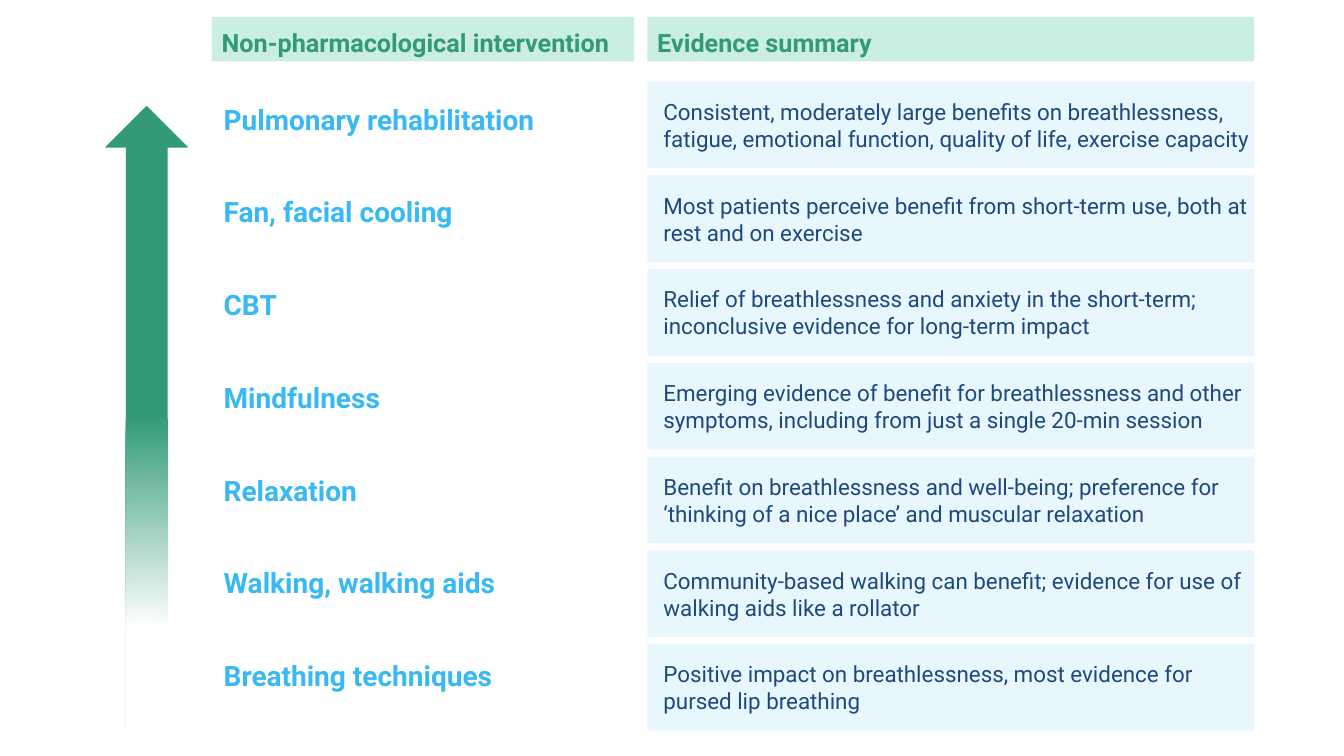
"""Build a slide ranking non-pharmacological interventions by their evidence."""
from lxml import etree
from pptx import Presentation
from pptx.dml.color import RGBColor
from pptx.enum.shapes import MSO_SHAPE
from pptx.enum.text import MSO_ANCHOR, MSO_AUTO_SIZE, PP_ALIGN
from pptx.oxml import parse_xml
from pptx.oxml.ns import nsdecls
from pptx.util import Inches, Pt

RECTANGLE, UP_ARROW = MSO_SHAPE.RECTANGLE, MSO_SHAPE.UP_ARROW
LEFT = PP_ALIGN.LEFT
TOP, MIDDLE = MSO_ANCHOR.TOP, MSO_ANCHOR.MIDDLE
GROW, FIXED = MSO_AUTO_SIZE.SHAPE_TO_FIT_TEXT, MSO_AUTO_SIZE.NONE

GREEN, MINT, SKY, ICE, NAVY = "329A77", "CAEEE2", "39B9F3", "E8F7FE", "1F497D"
LABEL_LEFT, LABEL_WIDTH, LABEL_HEIGHT = 2.12, 3.9, 0.68
LABEL_TOP, LABEL_PITCH = 0.63, 0.92
PANEL_LEFT, PANEL_WIDTH, PANEL_HEIGHT = 6.42, 6.02, 0.86
PANEL_TOP, PANEL_PITCH = 0.81, 0.93
HEADER_TOP, HEADER_HEIGHT = 0.17, 0.44

HEADERS = [
    ("Non-pharmacological intervention", 2.1, 4.19),
    ("Evidence summary", PANEL_LEFT, PANEL_WIDTH),
]
INTERVENTIONS = [
    ("Pulmonary rehabilitation",
     "Consistent, moderately large benefits on breathlessness, fatigue, "
     "emotional function, quality of life, exercise capacity"),
    ("Fan, facial cooling",
     "Most patients perceive benefit from short-term use, both at rest and on exercise"),
    ("CBT",
     "Relief of breathlessness and anxiety in the short-term; "
     "inconclusive evidence for long-term impact"),
    ("Mindfulness",
     "Emerging evidence of benefit for breathlessness and other symptoms, "
     "including from just a single 20-min session"),
    ("Relaxation",
     "Benefit on breathlessness and well-being; preference for "
     "‘thinking of a nice place’ and muscular relaxation"),
    ("Walking, walking aids",
     "Community-based walking can benefit; evidence for use of walking aids like a rollator"),
    ("Breathing techniques",
     "Positive impact on breathlessness, most evidence for pursed lip breathing"),
]
ARROW_STOPS = [(5, "FFFFFF"), (33, "FFFFFF"), (100, GREEN)]


def add_block(kind, left, top, width, height, fill):
    block = page.shapes.add_shape(kind, *map(Inches, (left, top, width, height)))
    block.shadow.inherit = False
    block.line.fill.background()
    block.fill.solid()
    block.fill.fore_color.rgb = RGBColor.from_string(fill)
    return block


def write(box, text, size, color, bold, spacing, anchor, fit):
    frame = box.text_frame
    frame.word_wrap = True
    frame.auto_size = fit
    frame.vertical_anchor = anchor
    para = frame.paragraphs[0]
    para.alignment = LEFT
    para.line_spacing = spacing
    span = para.add_run()
    span.text = text
    span.font.name = "Roboto"
    span.font.size = Pt(size)
    span.font.bold = bold
    span.font.color.rgb = RGBColor.from_string(color)


deck = Presentation()
deck.slide_width, deck.slide_height = Inches(13.33), Inches(7.5)
page = deck.slides.add_slide(deck.slide_layouts[6])

for heading, left, width in HEADERS:
    header = add_block(RECTANGLE, left, HEADER_TOP, width, HEADER_HEIGHT, MINT)
    write(header, heading, 18, GREEN, True, 1.2, MIDDLE, GROW)

arrow = add_block(UP_ARROW, 1.04, 1.05, 0.83, 6.2, GREEN)
gradient = parse_xml(f'<a:gradFill {nsdecls("a")} rotWithShape="1"><a:gsLst/>'
                     '<a:path path="circle"><a:fillToRect l="50000" t="130000" '
                     'r="50000" b="-30000"/></a:path></a:gradFill>')
namespace = "{http://schemas.openxmlformats.org/drawingml/2006/main}"
for share, color in ARROW_STOPS:
    stop = etree.SubElement(gradient[0], namespace + "gs", pos=str(share * 1000))
    etree.SubElement(stop, namespace + "srgbClr", val=color)
properties = arrow.element.spPr
properties.replace(properties.find(namespace + "solidFill"), gradient)

for row, (intervention, evidence) in enumerate(INTERVENTIONS):
    label = page.shapes.add_textbox(
        Inches(LABEL_LEFT), Inches(LABEL_TOP + row * LABEL_PITCH),
        Inches(LABEL_WIDTH), Inches(LABEL_HEIGHT))
    write(label, intervention, 20, SKY, True, 2.0, TOP, GROW)

    panel = add_block(RECTANGLE, PANEL_LEFT, PANEL_TOP + row * PANEL_PITCH,
                      PANEL_WIDTH, PANEL_HEIGHT, ICE)
    panel.text_frame.margin_left = Inches(0.16)
    panel.text_frame.margin_right = Inches(0.03)
    write(panel, evidence, 16, NAVY, False, 1.0, MIDDLE, FIXED)

deck.save("out.pptx")
